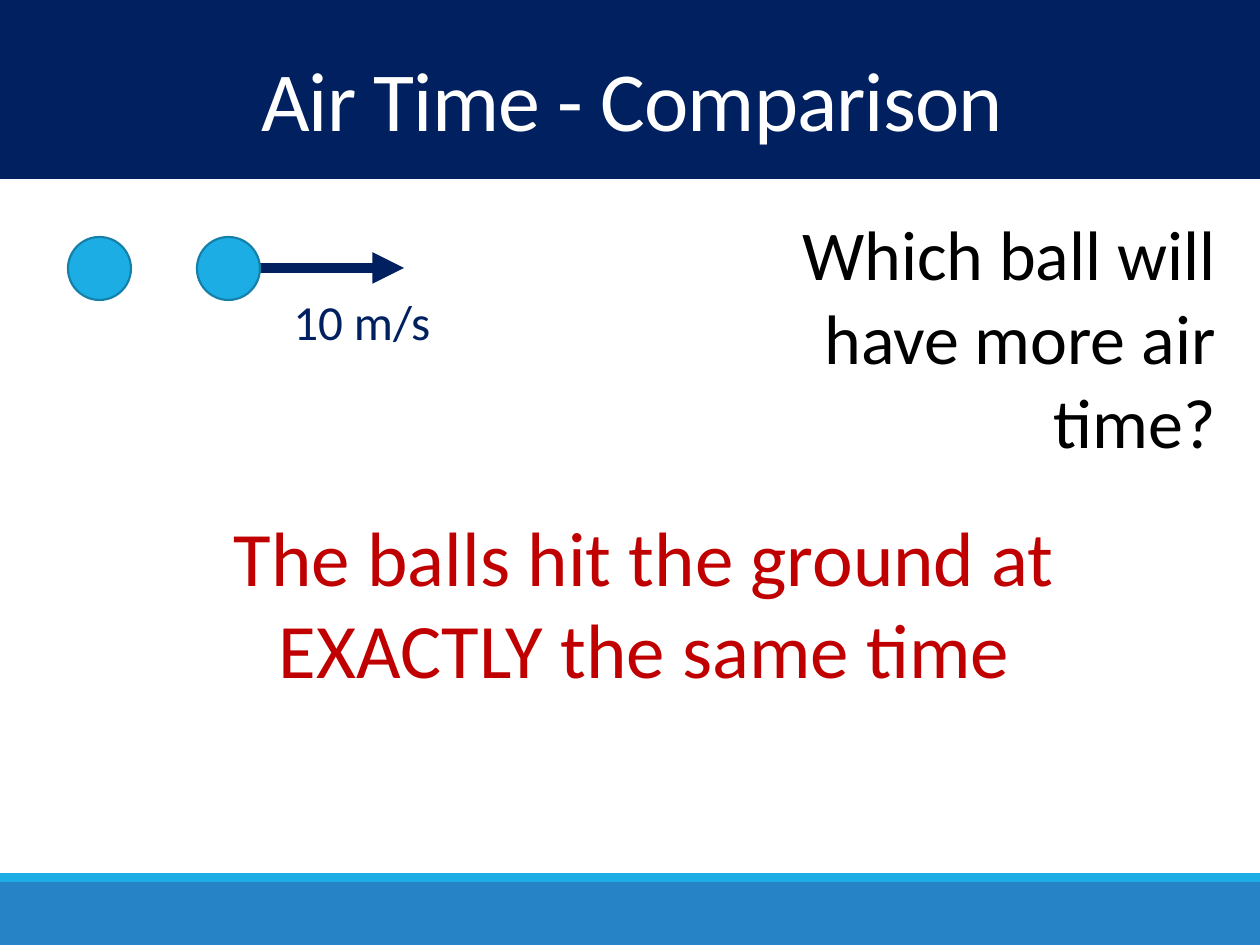
from lxml import etree
from pptx import Presentation
from pptx.dml.color import RGBColor
from pptx.enum.shapes import MSO_CONNECTOR, MSO_SHAPE
from pptx.enum.text import MSO_ANCHOR, PP_ALIGN
from pptx.oxml.ns import qn
from pptx.util import Pt

EMU_PER_PX = 914400 / 126
PAGE_WIDTH, PAGE_HEIGHT = 1260, 945

NAVY = RGBColor(0x00, 0x20, 0x60)
BLUE = RGBColor(0x26, 0x83, 0xC6)
SKY = RGBColor(0x1C, 0xAD, 0xE4)
RIM = RGBColor(0x15, 0x80, 0xA9)
RED = RGBColor(0xC0, 0x00, 0x00)
BLACK = RGBColor(0x00, 0x00, 0x00)
WHITE = RGBColor(0xFF, 0xFF, 0xFF)

RECTANGLE, OVAL = MSO_SHAPE.RECTANGLE, MSO_SHAPE.OVAL
STRAIGHT = MSO_CONNECTOR.STRAIGHT
LEFT, CENTER, RIGHT = PP_ALIGN.LEFT, PP_ALIGN.CENTER, PP_ALIGN.RIGHT
TOP, MIDDLE = MSO_ANCHOR.TOP, MSO_ANCHOR.MIDDLE


def px(*lengths):
    return [round(length * EMU_PER_PX) for length in lengths]


def add_filled(page, kind, box, fill, rim=None):
    shape = page.shapes.add_shape(kind, *px(*box))
    shape.shadow.inherit = False
    shape.fill.solid()
    shape.fill.fore_color.rgb = fill
    if rim is None:
        shape.line.fill.background()
    else:
        shape.line.color.rgb = rim
        shape.line.width = Pt(1.25)
    return shape


def add_label(page, box, text, size, color, align, anchor=TOP, wrap=True):
    frame = page.shapes.add_textbox(*px(*box)).text_frame
    frame.word_wrap = wrap
    frame.vertical_anchor = anchor
    frame.text = text
    para = frame.paragraphs[0]
    para.alignment = align
    font = para.runs[0].font
    font.name, font.size, font.color.rgb = "Calibri", Pt(size), color
    return para


def add_arrow(page, start, end, color, width):
    arrow = page.shapes.add_connector(STRAIGHT, *px(*start, *end))
    arrow.line.color.rgb = color
    arrow.line.width = Pt(width)
    etree.SubElement(arrow.line._get_or_add_ln(), qn("a:tailEnd"), type="triangle")
    etree.SubElement(arrow._element.spPr, qn("a:effectLst"))


def add_footer(page, box):
    """A thin sky stripe along the top of a blue band."""
    left, top, width, height = box
    stripe = 9
    add_filled(page, RECTANGLE, (left, top + stripe, width, height - stripe), BLUE)
    add_filled(page, RECTANGLE, (left, top, width, stripe), SKY)


def add_header(page, box):
    left, top, width, height = box
    add_filled(page, RECTANGLE, box, NAVY)
    title = add_label(page, (left + 4, top + 53, width - 4, 106),
                      "Air Time - Comparison", 48, WHITE, CENTER, MIDDLE)
    title.line_spacing = 0.85
    title.runs[0].font._element.set("spc", "-50")


def add_balls(page, box):
    """A ball at rest beside one launched sideways, with its speed below."""
    left, top, width, diameter = box
    step = 129
    middle = top + diameter // 2
    edge = left + step + diameter
    add_arrow(page, (edge, middle), (left + width, middle), NAVY, 6)
    for index in range(2):
        add_filled(page, OVAL, (left + index * step, top, diameter, diameter), SKY, RIM)
    add_label(page, (edge + 21, top + 48, 163, 72), "10 m/s", 28, NAVY, LEFT, wrap=False)


def build_comparison(page):
    add_footer(page, (0, 873, PAGE_WIDTH, PAGE_HEIGHT - 873))
    add_header(page, (0, 0, PAGE_WIDTH, 179))
    add_balls(page, (68, 237, 336, 63))
    add_label(page, (645, 204, 583, 183),
              "Which ball will have more air time?", 40, BLACK, RIGHT)
    add_label(page, (181, 503, 927, 199),
              "The balls hit the ground at EXACTLY the same time", 44, RED, CENTER)


def main():
    deck = Presentation()
    deck.slide_width, deck.slide_height = px(PAGE_WIDTH, PAGE_HEIGHT)
    build_comparison(deck.slides.add_slide(deck.slide_layouts[6]))
    deck.save("out.pptx")


if __name__ == "__main__":
    main()
